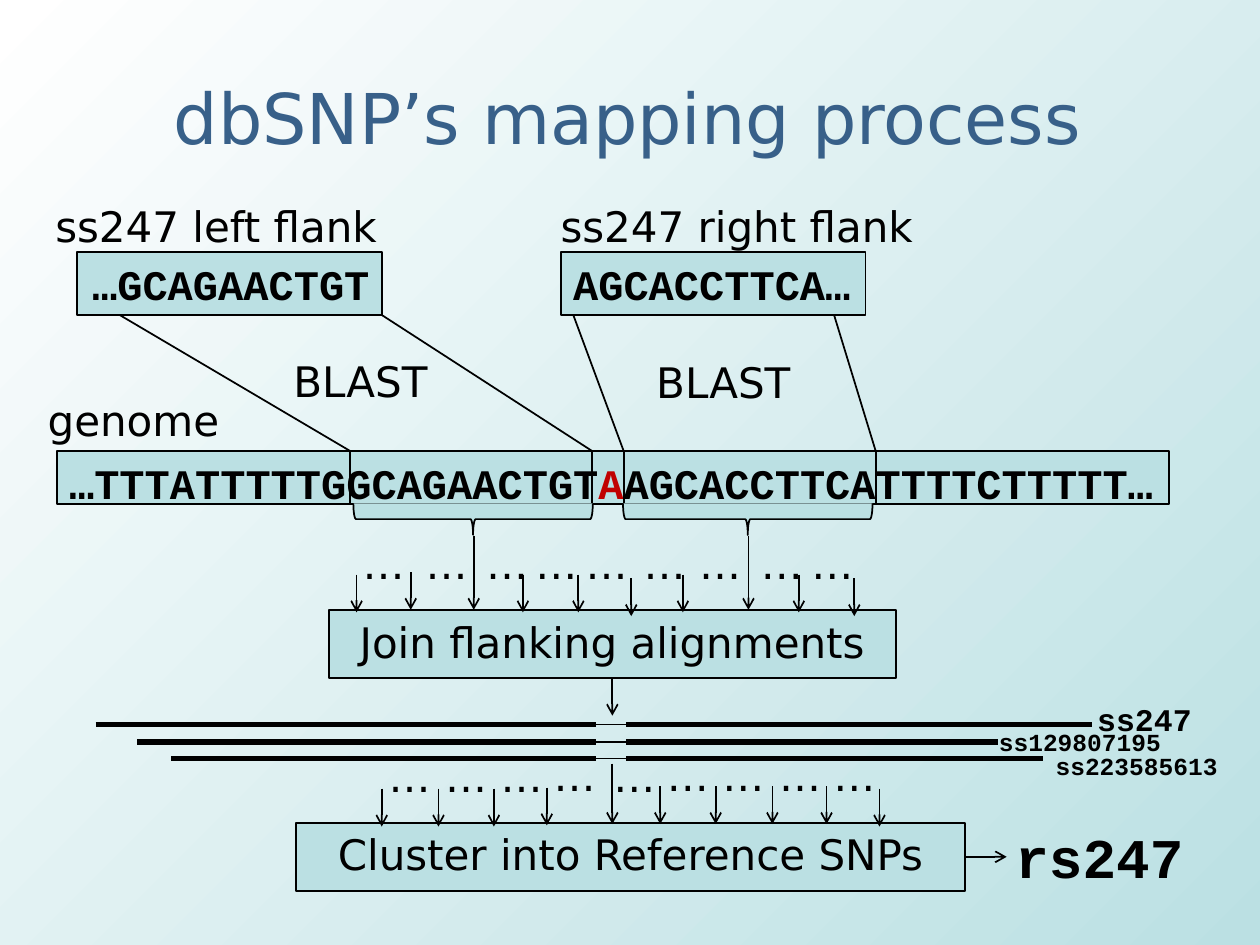
from dataclasses import dataclass

from lxml.etree import SubElement
from pptx import Presentation
from pptx.dml.color import RGBColor as Rgb
from pptx.enum.shapes import MSO_CONNECTOR as Link, MSO_SHAPE as Form
from pptx.enum.text import (MSO_ANCHOR as Anchor, MSO_AUTO_SIZE as Auto,
                            PP_ALIGN as Align)
from pptx.oxml.ns import qn
from pptx.util import Inches, Pt

COLS, ROWS = 100, 75  # the slide's grid; every length below is in its cells
CELL = Inches(0.1)


@dataclass(frozen=True)
class Theme:
    ink: str = "000000"
    fill: str = "BBE0E3"
    paper: str = "FFFFFF"
    title: str = "386089"
    snp: str = "C00000"
    sans: str = "DejaVu Sans"
    mono: str = "Courier New"
    head: int = 40
    large: int = 32
    body: int = 24
    label: int = 18
    small: int = 14
    thin: float = 1
    thick: float = 3


T = Theme()


def cells(*nums):
    return [round(n * CELL) for n in nums]


def write(frame, text, size=T.body, font=T.sans, bold=False, color=T.ink,
          align=Align.LEFT):
    """Fill a frame with text, or with a list of (text, colour) runs."""
    para = frame.paragraphs[0]
    para.alignment = align
    for part, tint in [(text, color)] if isinstance(text, str) else text:
        run = para.add_run()
        run.text = part
        run.font.size, run.font.name, run.font.bold = Pt(size), font, bold
        run.font.color.rgb = Rgb.from_string(tint)


def label(slide, x, y, w, h, text, **style):
    frame = slide.shapes.add_textbox(*cells(x, y, w, h)).text_frame
    frame.word_wrap = False
    frame.auto_size = Auto.SHAPE_TO_FIT_TEXT
    write(frame, text, **style)


def shape(slide, form, x, y, w, h):
    item = slide.shapes.add_shape(form, *cells(x, y, w, h))
    item.shadow.inherit = False
    item.fill.solid()
    item.fill.fore_color.rgb = Rgb.from_string(T.fill)
    item.line.color.rgb = Rgb.from_string(T.ink)
    item.line.width = Pt(T.thin)
    return item


def box(slide, x, y, w, h, text, **style):
    frame = shape(slide, Form.RECTANGLE, x, y, w, h).text_frame
    frame.vertical_anchor = Anchor.TOP
    frame.word_wrap = True
    write(frame, text, **style)


def brace(slide, x, y, w, h):
    """Place a brace that opens upward, given the frame it covers."""
    left, top = x + (w - h) / 2, y + (h - w) / 2
    shape(slide, Form.LEFT_BRACE, left, top, h, w).rotation = 270


def line(slide, x1, y1, x2, y2, width=T.thin, arrow=False):
    item = slide.shapes.add_connector(Link.STRAIGHT, *cells(x1, y1, x2, y2))
    item.line.color.rgb = Rgb.from_string(T.ink)
    item.line.width = Pt(width)
    props = item._element.spPr
    if arrow:
        SubElement(props.find(qn("a:ln")), qn("a:tailEnd"), type="arrow")
    SubElement(props, qn("a:effectLst"))


def drops(slide, marks, fall=3):
    """Draw short down arrows from (x, y) points."""
    for x, y in marks:
        line(slide, x, y, x, y + fall, arrow=True)


def dots(slide, marks):
    for x, y in marks:
        label(slide, x, y, 4.8, 5, "…")


def backdrop(slide):
    fill = slide.background.fill
    fill.gradient()
    fill.gradient_angle = 315
    for stop, tint in zip(fill.gradient_stops, (T.paper, T.fill)):
        stop.color.rgb = Rgb.from_string(tint)


def title(slide, text):
    frame = slide.shapes.add_textbox(*cells(5, 1, 90, 16.5)).text_frame
    frame.word_wrap = True
    frame.vertical_anchor = Anchor.MIDDLE
    frame.margin_left = frame.margin_top = frame.margin_bottom = Inches(0.06)
    write(frame, text, size=T.head, color=T.title, align=Align.CENTER)


def flanks(slide):
    code = dict(font=T.mono, bold=True)
    box(slide, 6.1, 20, 24.2, 5, "…GCAGAACTGT", align=Align.RIGHT, **code)
    box(slide, 44.5, 20, 24.2, 5, "AGCACCTTCA…", **code)
    label(slide, 3.4, 15.4, 28.1, 5, "ss247 left flank")
    label(slide, 43.5, 15.4, 30.5, 5, "ss247 right flank")
    box(slide, 4.5, 35.8, 88.3, 4.2,
        [("…TTTATTTTTGGCAGAACTGT", T.ink), ("A", T.snp),
         ("AGCACCTTCATTTTCTTTTT…", T.ink)], **code)
    for top, foot in ((9.5, 27.8), (30.3, 47), (45.5, 49.5), (66.2, 69.5)):
        line(slide, foot, 35.8, foot, 40)
        line(slide, top, 25, foot, 35.8)
    label(slide, 22.3, 27.7, 12.9, 5, "BLAST")
    label(slide, 51.1, 27.8, 12.9, 5, "BLAST")
    label(slide, 2.8, 30.8, 15.6, 5, "genome")


def joins(slide):
    brace(slide, 28.05, 39.95, 19, 2.5)
    brace(slide, 49.45, 39.95, 19.8, 2.5)
    box(slide, 26.1, 48.4, 45, 5.4, "Join flanking alignments",
        align=Align.CENTER)
    drops(slide, [(37.6, 42.5), (59.4, 42.5)], fall=5.9)
    drops(slide, [(32.6, 45.4), (50.1, 45.9), (67.8, 45.9)])
    drops(slide, [(x, 45.6) for x in (28.3, 41.5, 45.9, 54.2, 63.4)])
    dots(slide, [(x, 42.2) for x in (27.8, 32.8, 37.6, 41.5, 45.5, 50.1,
                                     54.5, 59.4, 63.4)])
    drops(slide, [(48.6, 53.8)])


def reads(slide):
    for start, end, y in ((13.6, 82.8, 60.2), (10.9, 79.2, 58.9),
                          (7.6, 86.7, 57.5)):
        line(slide, start, y, 47.3, y, width=T.thick)
        line(slide, 49.7, y, end, y, width=T.thick)
        line(slide, 47.3, y, 49.8, y)
    code = dict(font=T.mono, bold=True)
    label(slide, 86.1, 55.1, 9.6, 4, "ss247", size=T.label, **code)
    label(slide, 78.3, 57.2, 15.3, 3.4, "ss129807195", size=T.small, **code)
    label(slide, 82.8, 59.1, 15.3, 3.4, "ss223585613", size=T.small, **code)


def cluster(slide):
    box(slide, 23.5, 65.3, 53.1, 5.4, "Cluster into Reference SNPs",
        align=Align.CENTER)
    drops(slide, [(48.6, 60.6)], fall=4.8)
    marks = [(30.3, 62.6), (34.8, 62.6), (39.2, 62.6), (43.4, 62.5),
             (52.4, 62.4), (56.8, 62.4), (61.3, 62.4), (65.6, 62.4)]
    drops(slide, marks + [(69.8, 62.6)])
    dots(slide, [(x - 0.45, 59.1 if y == 62.6 else 59) for x, y in marks])
    dots(slide, [(47.7, 59.1)])
    line(slide, 76.6, 68, 79.9, 68, arrow=True)
    label(slide, 79.6, 64.8, 15.5, 6.4, "rs247", size=T.large, font=T.mono,
          bold=True)


def main():
    deck = Presentation()
    deck.slide_width, deck.slide_height = COLS * CELL, ROWS * CELL
    slide = deck.slides.add_slide(deck.slide_layouts[6])
    backdrop(slide)
    title(slide, "dbSNP’s mapping process")
    for part in (flanks, joins, reads, cluster):
        part(slide)
    deck.save("out.pptx")


if __name__ == "__main__":
    main()
